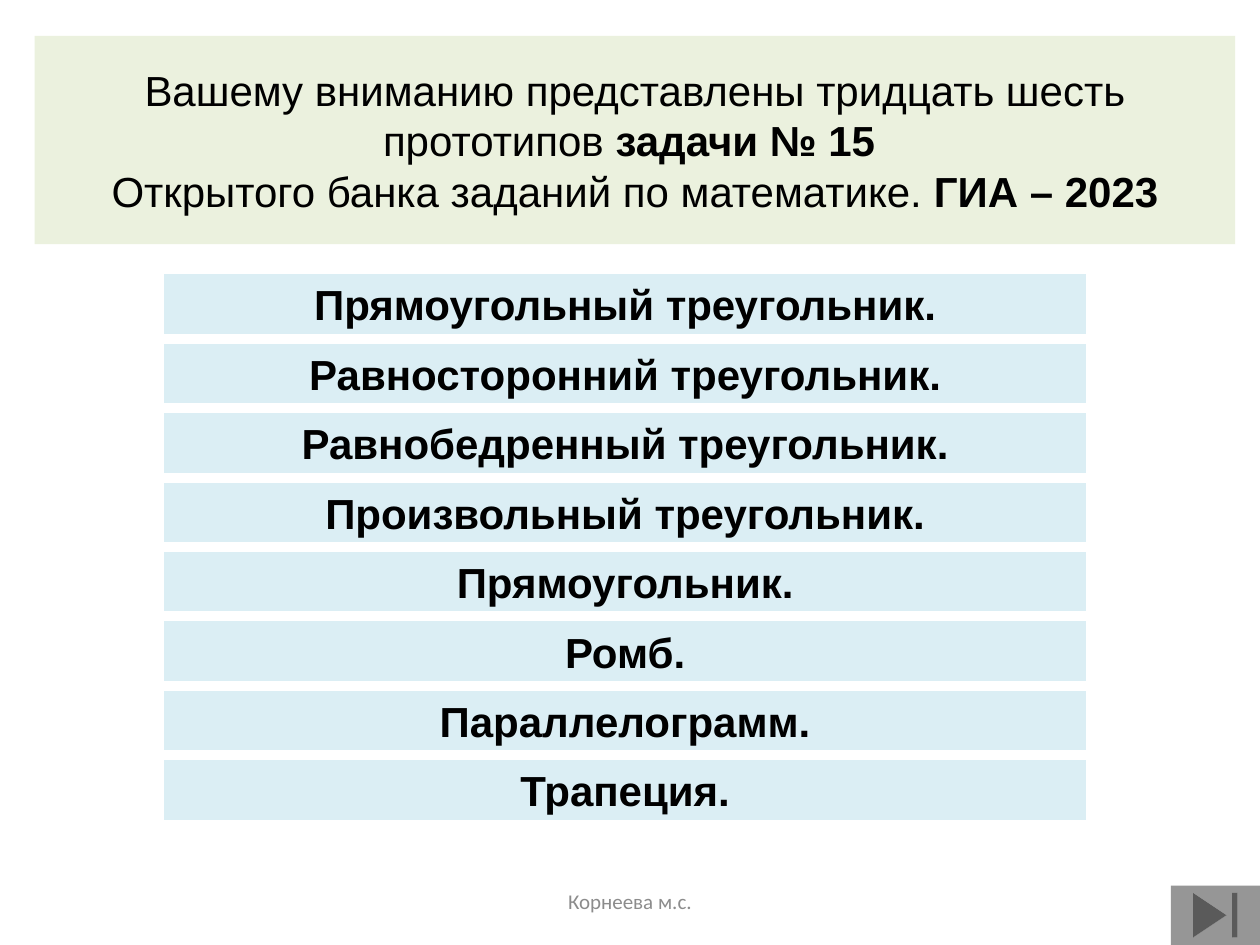
from pptx import Presentation
from pptx.dml.color import RGBColor
from pptx.enum.shapes import MSO_SHAPE as Shape
from pptx.enum.text import MSO_ANCHOR as Anchor, PP_ALIGN as Align
from pptx.util import Pt

BLACK = RGBColor(0x00, 0x00, 0x00)
PALE_GREEN = RGBColor(0xEB, 0xF1, 0xDE)
PALE_BLUE = RGBColor(0xDB, 0xEE, 0xF4)
BUTTON_GRAY = RGBColor(0x96, 0x96, 0x96)
FOOTER_GRAY = RGBColor(0x8C, 0x8C, 0x8C)

# Each banner line is a list of (text, bold) runs
BANNER_LINES = [
    [("Вашему вниманию представлены тридцать шесть", False)],
    [("прототипов ", False), ("задачи № 15 ", True)],
    [("Открытого банка заданий по математике. ", False), ("ГИА – 2023", True)],
]
TOPICS = [
    "Прямоугольный треугольник.",
    "Равносторонний треугольник.",
    "Равнобедренный треугольник.",
    "Произвольный треугольник.",
    "Прямоугольник.",
    "Ромб.",
    "Параллелограмм.",
    "Трапеция.",
]


def write_text(shape, lines, *, size=24, font="Arial", color=BLACK, wrap=False):
    frame = shape.text_frame
    frame.word_wrap = wrap
    frame.vertical_anchor = Anchor.MIDDLE
    for index, runs in enumerate(lines):
        paragraph = frame.add_paragraph() if index else frame.paragraphs[0]
        paragraph.alignment = Align.CENTER
        for text, bold in runs:
            run = paragraph.add_run()
            run.text = text
            run.font.size = Pt(size)
            run.font.name = font
            run.font.bold = bold
            run.font.color.rgb = color


def add_filled_shape(slide, kind, box, color):
    shape = slide.shapes.add_shape(kind, *map(Pt, box))
    shape.shadow.inherit = False
    shape.fill.solid()
    shape.fill.fore_color.rgb = color
    shape.line.fill.background()
    return shape


def add_topic_menu(slide, box, button_height=34):
    left, top, width, height = box
    pitch = (height - button_height) / (len(TOPICS) - 1)
    for index, topic in enumerate(TOPICS):
        button_box = (left, top + index * pitch, width, button_height)
        button = add_filled_shape(slide, Shape.ACTION_BUTTON_CUSTOM, button_box, PALE_BLUE)
        write_text(button, [[(topic, True)]])


def add_banner(slide, box):
    banner = add_filled_shape(slide, Shape.RECTANGLE, box, PALE_GREEN)
    write_text(banner, BANNER_LINES)


def add_footer(slide, box):
    footer = slide.shapes.add_textbox(*map(Pt, box))
    write_text(footer, [[("Корнеева м.с.", False)]], size=12, font="Calibri",
               color=FOOTER_GRAY, wrap=True)


def main():
    presentation = Presentation()
    presentation.slide_width = Pt(720)
    presentation.slide_height = Pt(540)
    slide = presentation.slides.add_slide(presentation.slide_layouts[6])

    # Topic buttons
    add_topic_menu(slide, (93.7, 156.7, 527, 311.8))
    # Heading banner
    add_banner(slide, (19.8, 20.5, 686, 119))
    # Jump-to-end button in the corner
    add_filled_shape(slide, Shape.ACTION_BUTTON_END, (669, 506, 51, 34), BUTTON_GRAY)
    # Author line
    add_footer(slide, (246, 500.5, 228, 28.75))

    presentation.save("out.pptx")


if __name__ == "__main__":
    main()
